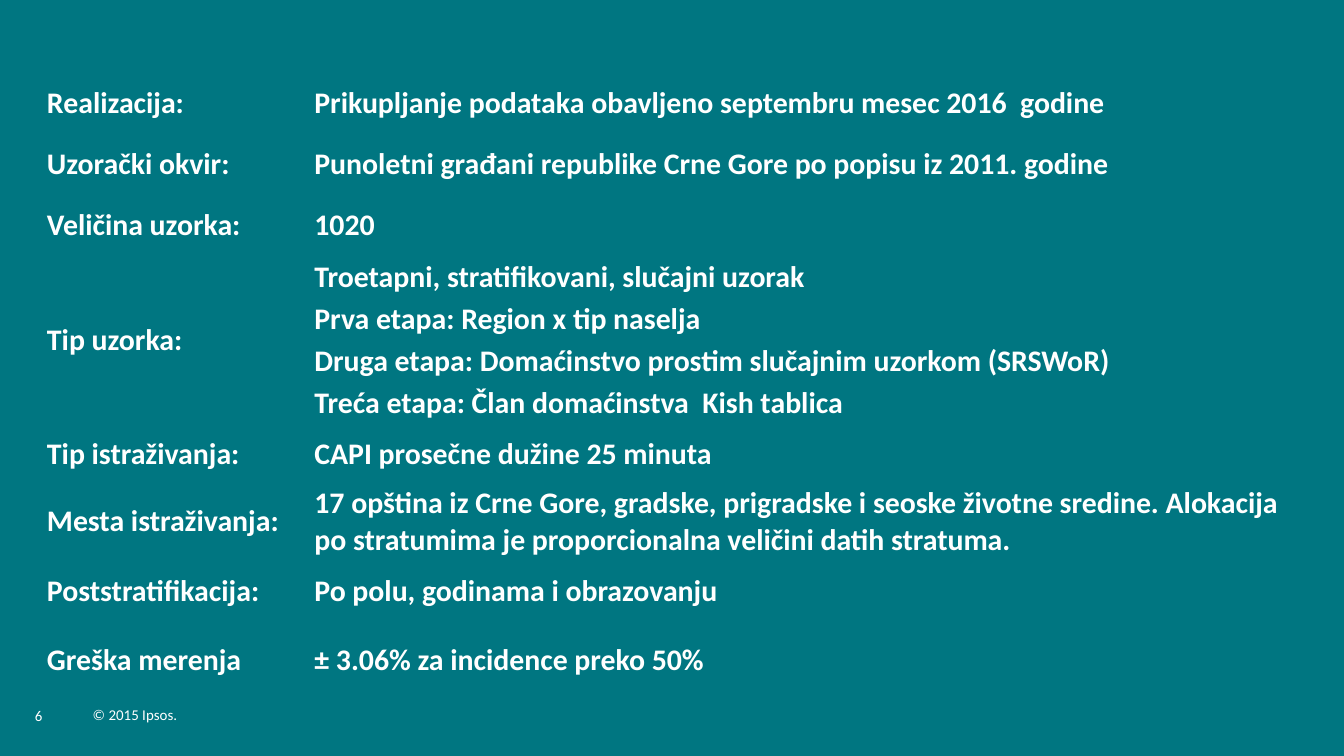
from dataclasses import dataclass

from pptx import Presentation
from pptx.dml.color import RGBColor
from pptx.enum.text import MSO_ANCHOR
from pptx.oxml.ns import qn
from pptx.util import Inches, Pt

MIDDLE = MSO_ANCHOR.MIDDLE
BOTTOM = MSO_ANCHOR.BOTTOM
PLAIN = "{2D5ABB26-0587-4C30-8999-92F81FD0307C}"
STRETCH = 1.01


@dataclass(frozen=True)
class Theme:
    font: str = "Calibri"
    back: RGBColor = RGBColor(0x00, 0x76, 0x81)
    ink: RGBColor = RGBColor(0xFF, 0xFF, 0xFF)
    body: int = 16
    foot: int = 8


THEME = Theme()

FACTS = [
    ("Realizacija:", 0.45,
     ["Prikupljanje podataka obavljeno septembru mesec 2016  godine"]),
    ("Uzorački okvir:", 0.45,
     ["Punoletni građani republike Crne Gore po popisu iz 2011. godine"]),
    ("Veličina uzorka:", 0.45, ["1020"]),
    ("Tip uzorka:", 0.31,
     ["Troetapni, stratifikovani, slučajni uzorak",
      "Prva etapa: Region x tip naselja",
      "Druga etapa: Domaćinstvo prostim slučajnim uzorkom (SRSWoR)",
      "Treća etapa: Član domaćinstva  Kish tablica"]),
    ("Tip istraživanja:", 0.45, ["CAPI prosečne dužine 25 minuta"]),
    ("Mesta istraživanja:", 0.51,
     ["17 opština iz Crne Gore, gradske, prigradske i seoske životne sredine. "
      "Alokacija po stratumima je proporcionalna veličini datih stratuma."]),
    ("Poststratifikacija:", 0.51, ["Po polu, godinama i obrazovanju"]),
    ("Greška merenja", 0.51, ["± 3.06% za incidence preko 50%"]),
]


def write(frame, text, size=THEME.body, bold=False, indent=0, line=None):
    para = frame.paragraphs[0]
    if indent:
        props = para._p.get_or_add_pPr()
        props.set("marL", str(Inches(indent)))
        props.set("indent", "0")
    if line:
        para.line_spacing = line
    run = para.add_run()
    run.text = text
    font = run.font
    font.name = THEME.font
    font.size = Pt(size)
    font.bold = bold
    font.color.rgb = THEME.ink


def pad(item, side, anchor):
    item.margin_left = item.margin_right = Inches(side)
    item.margin_top = item.margin_bottom = 0
    item.vertical_anchor = anchor


def add_foot(slide, text, *place):
    box = slide.shapes.add_textbox(*map(Inches, place))
    frame = box.text_frame
    frame.word_wrap = False
    pad(frame, 0, BOTTOM)
    write(frame, text, size=THEME.foot, line=0.85)


def fill_cell(cell, text, side, indent=0):
    pad(cell, side, MIDDLE)
    write(cell.text_frame, text, bold=True, indent=indent)


def add_facts(slide):
    count = sum(len(lines) for _, _, lines in FACTS)
    frame = slide.shapes.add_table(
        count, 2, *map(Inches, (0.2, 0.54, 9.61, 4.64)))
    table = frame.table
    table.first_row = table.horz_banding = False
    table._tbl.tblPr.find(qn("a:tableStyleId")).text = PLAIN
    for col, wide in zip(table.columns, (2.05, 7.56)):
        col.width = Inches(wide)
    for cell in table.iter_cells():
        cell.fill.background()

    row = 0
    for label, high, lines in FACTS:
        head = table.cell(row, 0)
        if len(lines) > 1:
            head.merge(table.cell(row + len(lines) - 1, 0))
        fill_cell(head, label, 0.07, indent=0.08)
        for text in lines:
            table.rows[row].height = Inches(high * STRETCH)
            fill_cell(table.cell(row, 1), text, 0.09)
            row += 1


def main():
    deck = Presentation()
    deck.slide_width = Inches(10)
    deck.slide_height = deck.slide_width * 9 // 16
    slide = deck.slides.add_slide(deck.slide_layouts[6])
    fill = slide.background.fill
    fill.solid()
    fill.fore_color.rgb = THEME.back
    add_foot(slide, "6", 0.26, 5.13, 0.34, 0.26)
    add_foot(slide, "© 2015 Ipsos.", 0.69, 5.2, 0.76, 0.18)
    add_facts(slide)
    deck.save("out.pptx")


if __name__ == "__main__":
    main()
